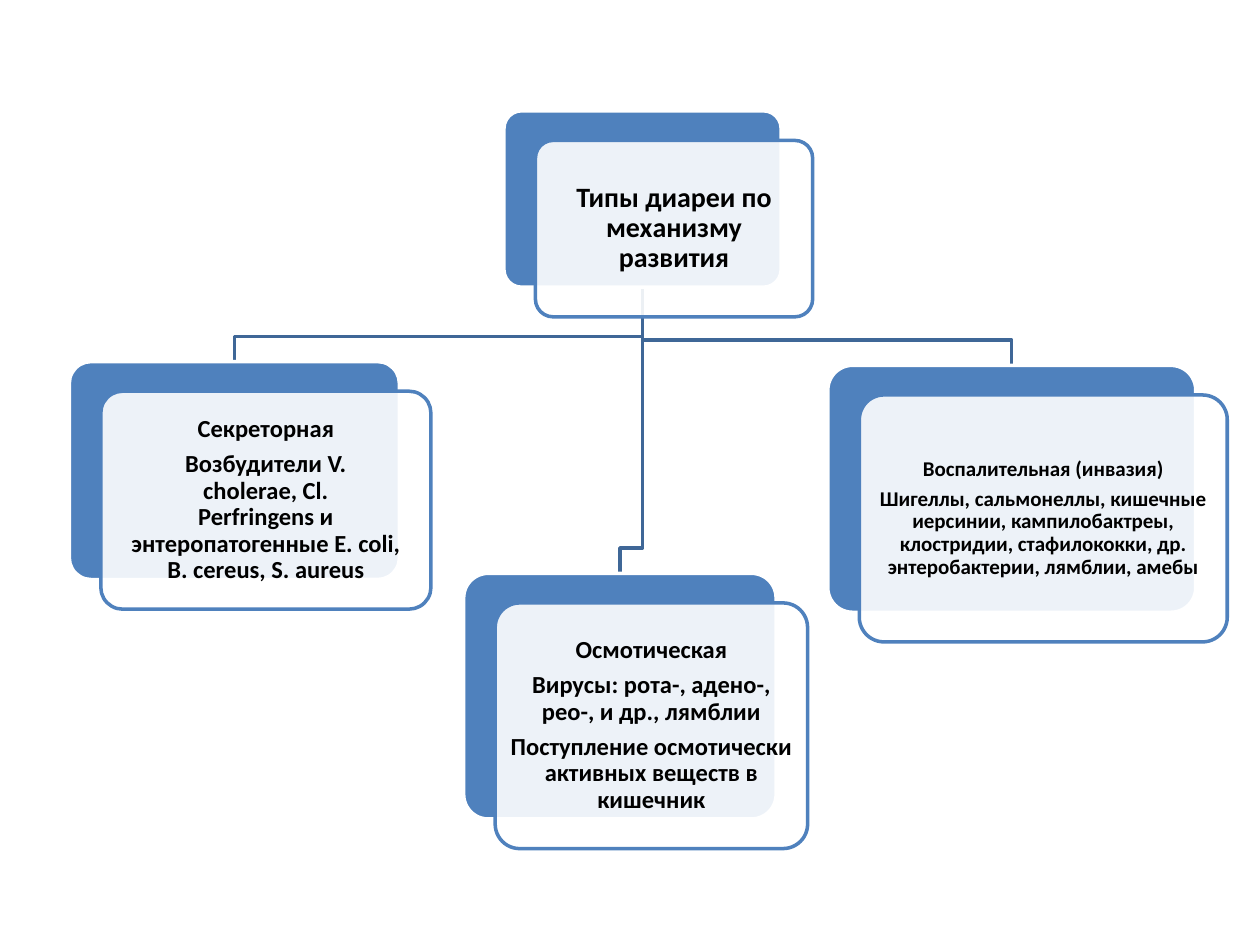
from dataclasses import dataclass

import pptx
import pptx.dml.color
import pptx.enum.shapes
import pptx.enum.text
import pptx.oxml.ns
import pptx.presentation
import pptx.shapes.autoshape
import pptx.slide
import pptx.util
from lxml import etree

RGBColor = pptx.dml.color.RGBColor
BLUE = RGBColor(0x4F, 0x81, 0xBD)
LINK_BLUE = RGBColor(0x3F, 0x67, 0x97)
WHITE = RGBColor(0xFF, 0xFF, 0xFF)
BLACK = RGBColor(0x00, 0x00, 0x00)

FONT = "Calibri"
LINE_WIDTH = pptx.util.Pt(2)
CELL = pptx.util.Inches(0.1)
COLS, ROWS = 100, 75
FRONT_DX, FRONT_DY = 2.5, 2.35
BEND_ABOVE_CHILD = 2


@dataclass(frozen=True)
class Card:
    """A node of the tree; its place is that of the back plate, in grid cells."""
    col: float
    row: float
    cols: float
    rows: float
    size: int
    inset: float
    paragraphs: tuple[str, ...]

    @property
    def middle(self) -> float:
        return self.col + self.cols / 2


ROOT = Card(40, 8.8, 22, 14, 16, 0.07, ("Типы диареи по механизму развития",))
INFLAMMATORY = Card(65.7, 29, 29.2, 19.6, 12, 0.05, (
    "Воспалительная (инвазия)",
    "Шигеллы, сальмонеллы, кишечные иерсинии, кампилобактреы, "
    "клостридии, стафилококки, др. энтеробактерии, лямблии, амебы",
))
OSMOTIC = Card(36.8, 45.5, 24.8, 19.5, 14, 0.06, (
    "Осмотическая",
    "Вирусы: рота-, адено-, рео-, и др., лямблии",
    "Поступление осмотически активных веществ в кишечник",
))
SECRETORY = Card(5.5, 28.7, 26.2, 17.3, 14, 0.06, (
    "Секреторная",
    "Возбудители V.\vcholerae, Cl.\vPerfringens и\v"
    "энтеропатогенные E. coli,\vB. cereus, S. aureus",
))
CHILDREN = (INFLAMMATORY, OSMOTIC, SECRETORY)


def cells(count: float) -> int:
    return round(count * CELL)


def set_alpha(sp: pptx.shapes.autoshape.Shape, percent: int) -> None:
    color = sp.fill._xPr.find(".//" + pptx.oxml.ns.qn("a:srgbClr"))
    etree.SubElement(color, pptx.oxml.ns.qn("a:alpha"), val=str(percent * 1000))


def add_link(s: pptx.slide.Slide, parent: Card, child: Card) -> None:
    """Draw the bent line from the parent's bottom to the child's top."""
    start = parent.row + parent.rows
    bend = child.row - BEND_ABOVE_CHILD
    points = [(parent.middle, bend), (child.middle, bend), (child.middle, child.row)]
    builder = s.shapes.build_freeform(cells(parent.middle), cells(start))
    builder.add_line_segments([(cells(x), cells(y)) for x, y in points], close=False)
    sp = builder.convert_to_shape()
    sp.shadow.inherit = False
    sp.fill.background()
    sp.line.color.rgb = LINK_BLUE
    sp.line.width = LINE_WIDTH


def add_plate(s: pptx.slide.Slide, card: Card, dx: float, dy: float,
              fill: RGBColor, line: RGBColor) -> pptx.shapes.autoshape.Shape:
    sp = s.shapes.add_shape(
        pptx.enum.shapes.MSO_SHAPE.ROUNDED_RECTANGLE,
        cells(card.col + dx), cells(card.row + dy), cells(card.cols), cells(card.rows))
    sp.adjustments[0] = 0.1
    sp.shadow.inherit = False
    sp.fill.solid()
    sp.fill.fore_color.rgb = fill
    sp.line.color.rgb = line
    sp.line.width = LINE_WIDTH
    return sp


def write_text(sp: pptx.shapes.autoshape.Shape, card: Card) -> None:
    tf = sp.text_frame
    tf.word_wrap = True
    tf.vertical_anchor = pptx.enum.text.MSO_ANCHOR.MIDDLE
    inset = pptx.util.Inches(card.inset)
    tf.margin_left = tf.margin_top = tf.margin_right = tf.margin_bottom = inset
    for i, text in enumerate(card.paragraphs):
        p = tf.add_paragraph() if i else tf.paragraphs[0]
        p.text = text
        p.alignment = pptx.enum.text.PP_ALIGN.CENTER
        p.line_spacing = 0.9
        p.space_after = pptx.util.Pt(0.35 * card.size)
        p.font.name = FONT
        p.font.size = pptx.util.Pt(card.size)
        p.font.bold = True
        p.font.color.rgb = BLACK


def add_card(s: pptx.slide.Slide, card: Card) -> None:
    add_plate(s, card, 0, 0, BLUE, WHITE)
    front = add_plate(s, card, FRONT_DX, FRONT_DY, WHITE, BLUE)
    set_alpha(front, 90)
    write_text(front, card)


def main() -> None:
    prs = pptx.Presentation()
    prs.slide_width = cells(COLS)
    prs.slide_height = cells(ROWS)
    s = prs.slides.add_slide(prs.slide_layouts[6])
    for child in CHILDREN:
        add_link(s, ROOT, child)
    for card in (ROOT, *CHILDREN):
        add_card(s, card)
    prs.save("out.pptx")


if __name__ == "__main__":
    main()
